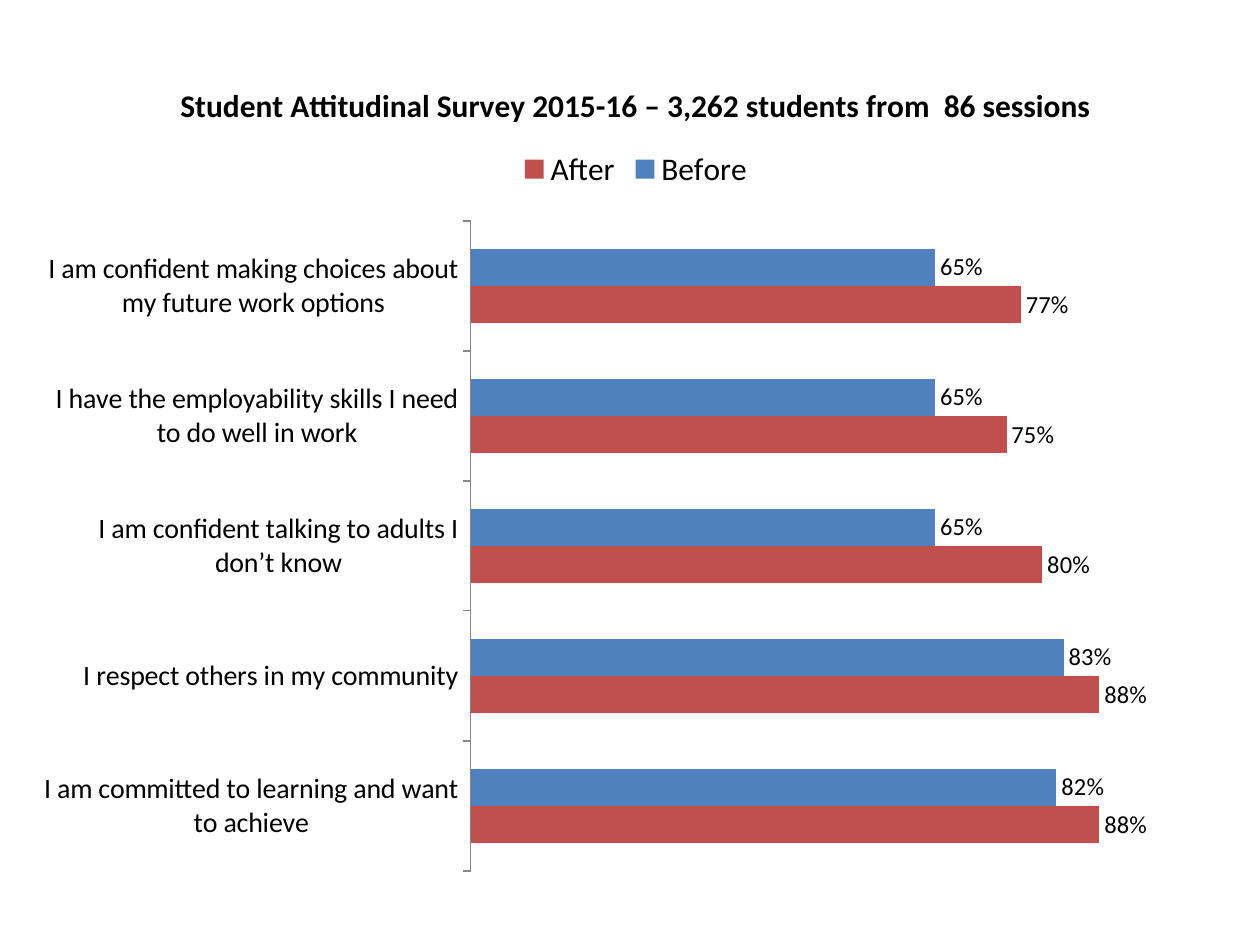
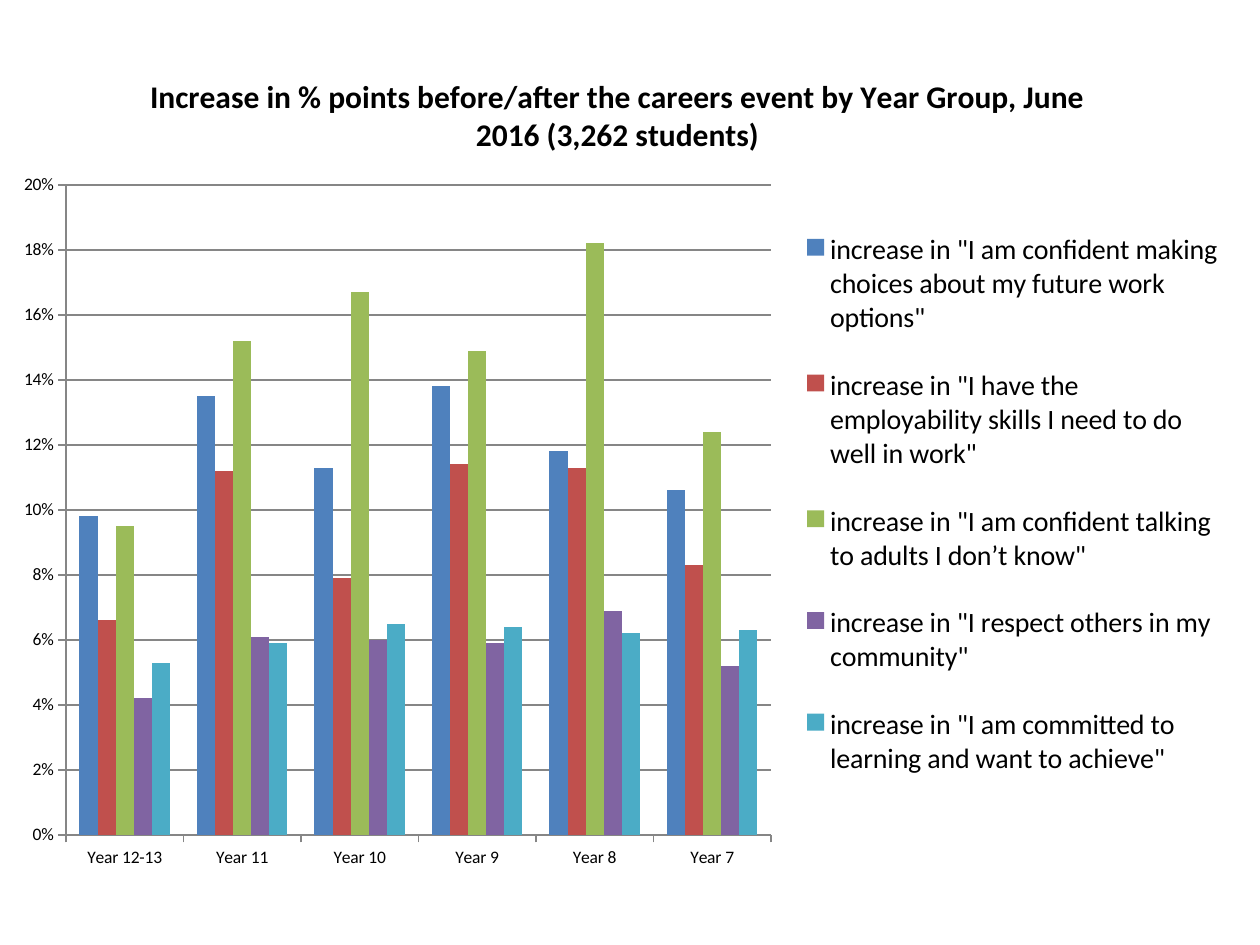
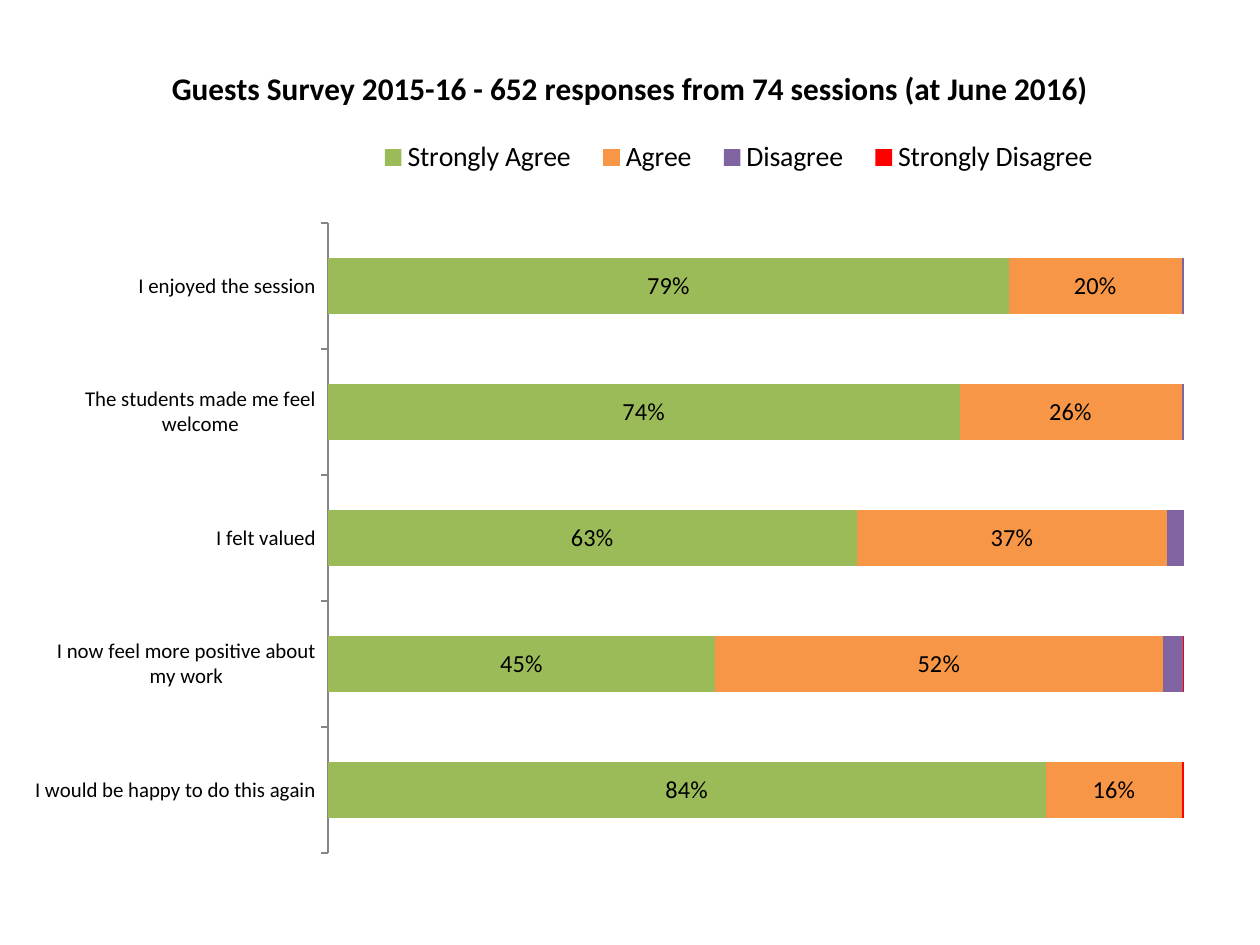
"""Build three survey result slides, each holding one chart."""
from lxml import etree
from pptx import Presentation
from pptx import util as u
from pptx.chart import data
from pptx.dml import color
from pptx.enum import chart as ce
from pptx.oxml import ns

EMU_PER_PX = u.Inches(1) / 126
COLORS = {
    "text": "000000", "axis": "868686", "blue": "4F81BD", "brick": "C0504D",
    "green": "9BBB59", "purple": "8064A2", "teal": "4BACC6",
    "orange": "F79646", "red": "FF0000",
}
SURVEYS = [
    {
        "title": "Student Attitudinal Survey 2015-16 – 3,262 students from  86 sessions",
        "kind": ce.XL_CHART_TYPE.BAR_CLUSTERED,
        "box": (44, 54, 1181, 837), "plot": (469, 221, 716, 650),
        "legend": ce.XL_LEGEND_POSITION.TOP, "legend_size": 18,
        "category_size": 16, "gap": 150, "top": 1, "step": 0.1,
        "categories": [
            "I am confident making choices about my future work options",
            "I have the employability skills I need to do well in work",
            "I am confident talking to adults I don’t know",
            "I respect others in my community",
            "I am committed to learning and want to achieve",
        ],
        "answers": [
            ("Before", "blue", (0.65, 0.65, 0.65, 0.83, 0.82)),
            ("After", "brick", (0.77, 0.75, 0.8, 0.88, 0.88)),
        ],
        "labelled": ("Before", "After"),
    },
    {
        "title": "Increase in % points before/after the careers event by Year Group, "
                 "June 2016 (3,262 students)",
        "kind": ce.XL_CHART_TYPE.COLUMN_CLUSTERED,
        "box": (0, 45, 1235, 838), "plot": (66, 185, 705, 650),
        "legend": ce.XL_LEGEND_POSITION.RIGHT, "legend_size": 16,
        "legend_box": (800, 200, 425, 610),
        "category_size": 10, "gap": 150, "top": 0.2, "step": 0.02,
        "categories": ["Year 12-13", "Year 11", "Year 10", "Year 9", "Year 8", "Year 7"],
        "answers": [
            ('increase in "I am confident making choices about my future work options"',
             "blue", (0.098, 0.135, 0.113, 0.138, 0.118, 0.106)),
            ('increase in "I have the employability skills I need to do well in work"',
             "brick", (0.066, 0.112, 0.079, 0.114, 0.113, 0.083)),
            ('increase in "I am confident talking to adults I don’t know"',
             "green", (0.095, 0.152, 0.167, 0.149, 0.182, 0.124)),
            ('increase in "I respect others in my community"',
             "purple", (0.042, 0.061, 0.06, 0.059, 0.069, 0.052)),
            ('increase in "I am committed to learning and want to achieve"',
             "teal", (0.053, 0.059, 0.065, 0.064, 0.062, 0.063)),
        ],
        "labelled": (),
    },
    {
        "title": "Guests Survey 2015-16 - 652 responses from 74 sessions (at June 2016)",
        "kind": ce.XL_CHART_TYPE.BAR_STACKED_100,
        "box": (35, 37, 1181, 835), "plot": (321, 223, 863, 630),
        "legend": ce.XL_LEGEND_POSITION.TOP, "legend_size": 16,
        "legend_box": (355, 130, 760, 55),
        "category_size": 12, "gap": 128, "top": 1, "step": 0.1,
        "categories": [
            "I enjoyed the session",
            "The students made me feel welcome",
            "I felt valued",
            "I now feel more positive about my work",
            "I would be happy to do this again",
        ],
        "answers": [
            ("Strongly Agree", "green", (0.79, 0.74, 0.63, 0.45, 0.84)),
            ("Agree", "orange", (0.2, 0.26, 0.37, 0.52, 0.16)),
            ("Disagree", "purple", (0.003, 0.003, 0.02, 0.024, 0)),
            ("Strongly Disagree", "red", (0, 0, 0, 0.001, 0.002)),
        ],
        "labelled": ("Strongly Agree", "Agree"),
    },
]


def px(length):
    return round(length * EMU_PER_PX)


def rgb(name):
    return color.RGBColor.from_string(COLORS[name])


def apply(target, **values):
    for key, value in values.items():
        setattr(target, key, value)


def style_font(font, size, bold=False):
    apply(font, size=u.Pt(size), bold=bold, name="Calibri")
    font.color.rgb = rgb("text")


def style_line(line):
    line.color.rgb = rgb("axis")
    line.width = u.Pt(0.75)


def set_layout(parent, index, part, frame, inner=False):
    for old in parent.findall(ns.qn("c:layout")):
        parent.remove(old)
    layout = etree.Element(ns.qn("c:layout"))
    manual = etree.SubElement(layout, ns.qn("c:manualLayout"))
    left, top, width, height = frame
    settings = {"layoutTarget": "inner"} if inner else {}
    settings.update(
        xMode="edge", yMode="edge",
        x=(part[0] - left) / width, y=(part[1] - top) / height,
        w=part[2] / width, h=part[3] / height,
    )
    for tag, value in settings.items():
        shown = value if isinstance(value, str) else f"{value:.4f}"
        etree.SubElement(manual, ns.qn(f"c:{tag}"), val=shown)
    parent.insert(index, layout)


def style_axes(chart, survey, horizontal):
    categories, values = chart.category_axis, chart.value_axis
    apply(categories, major_tick_mark=ce.XL_TICK_MARK.OUTSIDE,
          minor_tick_mark=ce.XL_TICK_MARK.NONE,
          has_major_gridlines=False, reverse_order=horizontal)
    apply(values, major_tick_mark=ce.XL_TICK_MARK.OUTSIDE,
          minor_tick_mark=ce.XL_TICK_MARK.NONE,
          has_major_gridlines=not horizontal, visible=not horizontal,
          minimum_scale=0, maximum_scale=survey["top"], major_unit=survey["step"])
    apply(values.tick_labels, number_format="0%", number_format_is_linked=False)
    for axis, size in ((categories, survey["category_size"]), (values, 10)):
        style_font(axis.tick_labels.font, size)
        style_line(axis.format.line)
    if not horizontal:
        style_line(values.major_gridlines.format.line)


def style_answers(chart, survey, stacked):
    plot = chart.plots[0]
    apply(plot, gap_width=survey["gap"], overlap=100 if stacked else 0,
          vary_by_categories=False)
    for series, (name, fill, _) in zip(plot.series, survey["answers"]):
        series.invert_if_negative = False
        series.format.fill.solid()
        series.format.fill.fore_color.rgb = rgb(fill)
        if name in survey["labelled"]:
            labels = series.data_labels
            apply(labels, show_value=True, number_format="0%", number_format_is_linked=False)
            style_font(labels.font, 14)
            if not stacked:
                labels.position = ce.XL_LABEL_POSITION.OUTSIDE_END


def add_survey(slide, survey):
    results = data.CategoryChartData(number_format="0%")
    results.categories = survey["categories"]
    for name, _, shares in survey["answers"]:
        results.add_series(name, shares)
    box, kind = survey["box"], survey["kind"]
    chart = slide.shapes.add_chart(kind, *map(px, box), results).chart
    style_font(chart.font, 10)

    chart.has_title = True
    heading = chart.chart_title.text_frame.paragraphs[0].add_run()
    heading.text = survey["title"]
    style_font(heading.font, 18, bold=True)

    chart.has_legend = True
    apply(chart.legend, position=survey["legend"], include_in_layout=False)
    style_font(chart.legend.font, survey["legend_size"])

    style_axes(chart, survey, kind != ce.XL_CHART_TYPE.COLUMN_CLUSTERED)
    style_answers(chart, survey, kind == ce.XL_CHART_TYPE.BAR_STACKED_100)
    plot_area = chart.element.find(f".//{ns.qn('c:plotArea')}")
    set_layout(plot_area, 0, survey["plot"], box, inner=True)
    if "legend_box" in survey:
        legend = chart.element.find(f".//{ns.qn('c:legend')}")
        set_layout(legend, 1, survey["legend_box"], box)


def main():
    deck = Presentation()
    apply(deck, slide_width=u.Inches(10), slide_height=u.Inches(7.5))
    for survey in SURVEYS:
        add_survey(deck.slides.add_slide(deck.slide_layouts[6]), survey)
    deck.save("out.pptx")


if __name__ == "__main__":
    main()
